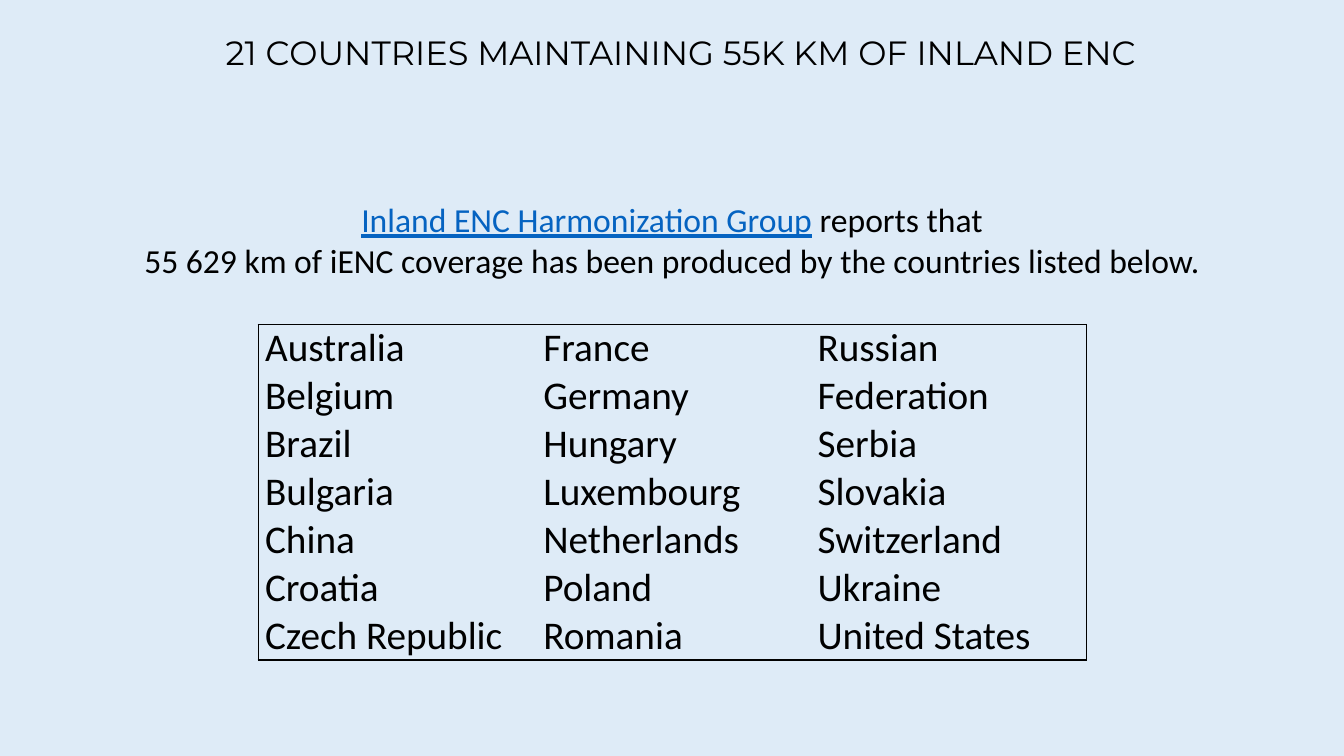
from dataclasses import dataclass

from lxml.etree import SubElement
from pptx import Presentation
from pptx.dml.color import RGBColor
from pptx.enum.text import MSO_ANCHOR as Anchor, PP_ALIGN as Align
from pptx.oxml.ns import qn
from pptx.slide import Slide
from pptx.table import _Cell as Cell
from pptx.text.text import Font
from pptx.util import Inches, Pt

COLORS = {"background": "DEEBF7", "text": "000000", "link": "0563C1"}
NO_STYLE_NO_GRID = "{2D5ABB26-0587-4C30-8999-92F81FD0307C}"
ROW_HEIGHTS = (3.32, 0.41)


@dataclass
class CountryColumn:
    width: float
    countries: list[str]
    edges: str


@dataclass
class TextBlock:
    left: float
    top: float
    width: float
    height: float
    lines: list[list[tuple[str, str]]]
    font: str
    align: Align
    line_spacing: float = 1.0


COUNTRY_COLUMNS = [
    CountryColumn(2.76, ["Australia", "Belgium", "Brazil", "Bulgaria", "China",
                         "Croatia", "Czech Republic"], "LTB"),
    CountryColumn(2.72, ["France", "Germany", "Hungary", "Luxembourg",
                         "Netherlands", "Poland", "Romania"], "TB"),
    CountryColumn(2.74, ["Russian Federation", "Serbia", "Slovakia",
                         "Switzerland", "Ukraine", "United States"], "RTB"),
]
TEXT_BLOCKS = [
    TextBlock(2.14, 0.06, 11.2, 0.97,
              [[("21 COUNTRIES MAINTAINING 55K KM OF INLAND ENC", "text")]],
              "Montserrat", Align.LEFT, 0.9),
    TextBlock(0, 1.92, 13.33, 0.91,
              [[("Inland ENC Harmonization Group", "link"), (" reports that", "text")],
               [("55 629 km of iENC coverage has been produced by the countries "
                 "listed below.", "text")]],
              "Calibri", Align.CENTER),
]


def style_font(font: Font, name: str, size: float, color: str) -> None:
    font.name = name
    font.size = Pt(size)
    font.color.rgb = RGBColor.from_string(COLORS[color])
    font.underline = color == "link"


def add_text_block(slide: Slide, block: TextBlock) -> None:
    frame = slide.shapes.add_textbox(
        Inches(block.left), Inches(block.top),
        Inches(block.width), Inches(block.height)).text_frame
    frame.word_wrap = True
    frame.vertical_anchor = Anchor.MIDDLE
    for index, line in enumerate(block.lines):
        paragraph = frame.add_paragraph() if index else frame.paragraphs[0]
        paragraph.alignment = block.align
        paragraph.line_spacing = block.line_spacing
        for words, color in line:
            run = paragraph.add_run()
            run.text = words
            style_font(run.font, block.font, 24, color)


def style_cell(cell: Cell, edges: str) -> None:
    """Draw the given edges (letters from LRTB) and leave the cell unfilled."""
    cell.margin_left = cell.margin_right = Inches(0.07)
    cell.margin_top = cell.margin_bottom = 0
    properties = cell._tc.get_or_add_tcPr()
    for edge in edges:
        border = SubElement(properties, qn(f"a:ln{edge}"), w=str(Pt(1)))
        fill = SubElement(border, qn("a:solidFill"))
        SubElement(fill, qn("a:srgbClr"), val=COLORS["text"])
    cell.fill.background()


def add_country_table(slide: Slide) -> None:
    width = sum(column.width for column in COUNTRY_COLUMNS)
    table = slide.shapes.add_table(
        len(ROW_HEIGHTS), len(COUNTRY_COLUMNS), Inches(2.56), Inches(3.22),
        Inches(width), Inches(sum(ROW_HEIGHTS))).table
    table.first_row = table.horz_banding = False
    table._tbl.tblPr.find(qn("a:tableStyleId")).text = NO_STYLE_NO_GRID
    for row, height in zip(table.rows, ROW_HEIGHTS):
        row.height = Inches(height)
    for index, column in enumerate(COUNTRY_COLUMNS):
        table.columns[index].width = Inches(column.width)
        cell = table.cell(0, index)
        style_cell(cell, column.edges)
        cell.text_frame.text = "\n".join(column.countries)
        for paragraph in cell.text_frame.paragraphs:
            style_font(paragraph.runs[0].font, "Calibri", 28, "text")
        style_cell(table.cell(1, index), "T")
    table.cell(1, 0).merge(table.cell(1, len(COUNTRY_COLUMNS) - 1))


def main() -> None:
    deck = Presentation()
    deck.slide_width, deck.slide_height = Inches(13.33), Inches(7.5)
    slide = deck.slides.add_slide(deck.slide_layouts[6])
    slide.background.fill.solid()
    slide.background.fill.fore_color.rgb = RGBColor.from_string(COLORS["background"])
    add_country_table(slide)
    for block in TEXT_BLOCKS:
        add_text_block(slide, block)
    deck.save("out.pptx")


if __name__ == "__main__":
    main()
